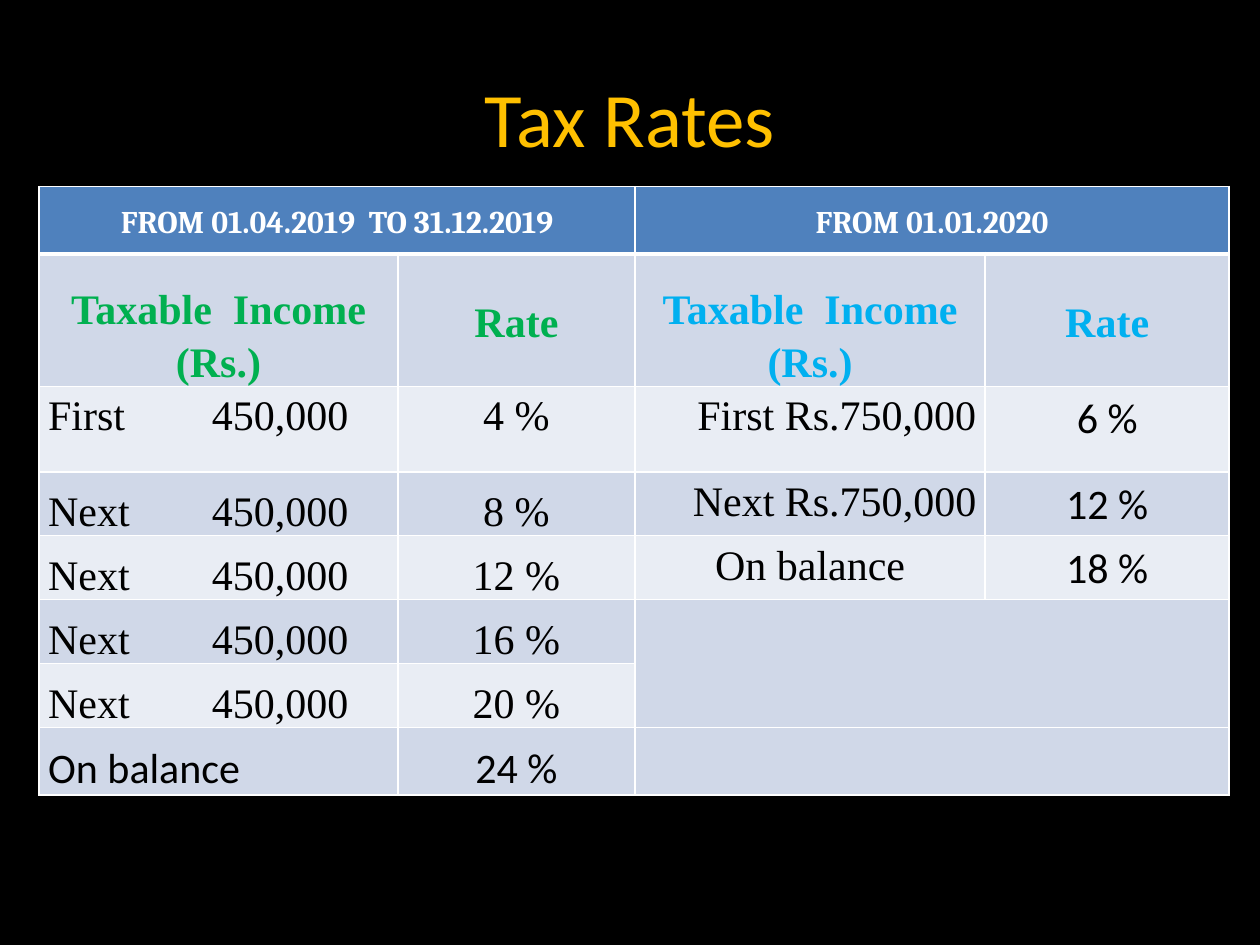
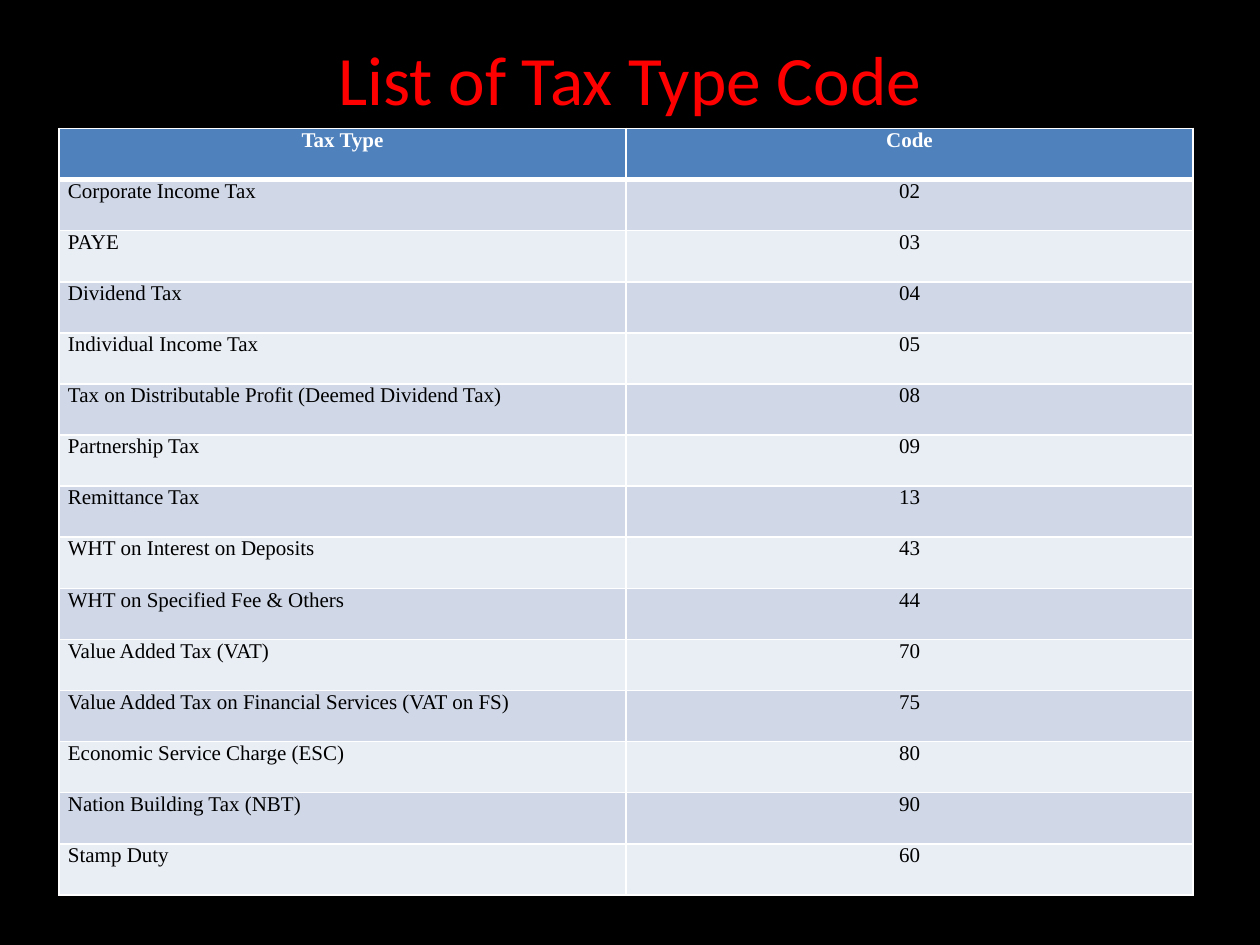
from lxml.etree import SubElement
from pptx import Presentation
from pptx.dml.color import RGBColor
from pptx.enum.text import MSO_ANCHOR as ANCHOR, MSO_AUTO_SIZE, PP_ALIGN as ALIGN
from pptx.oxml.ns import qn
from pptx.util import Cm, Pt

COLORS = {
    "black": "000000", "white": "FFFFFF", "header": "4F81BD",
    "band_dark": "D0D8E8", "band_light": "E9EDF4",
    "gold": "FFC000", "red": "FF0000", "green": "00B050", "blue": "00B0F0",
}
BODY_FONT, SANS_FONT, PERIOD_FONT = "Times New Roman", "Calibri", "Cambria"
TITLE_LEFT, TITLE_TOP, TITLE_WIDTH = 1.27, 0.76, 22.86
SIDE_MARGIN = 0.18
AMOUNT_TAB = 3.3
LINE_SPACING = 1.15

PERIODS = ["FROM 01.04.2019  TO 31.12.2019", "FROM 01.01.2020"]
RATE_HEADINGS = ["Taxable  Income (Rs.)", "Rate"]
RATES_2019 = [
    ("First\t450,000", "4 %"),
    ("Next\t450,000", "8 %"),
    ("Next\t450,000", "12 %"),
    ("Next\t450,000", "16 %"),
    ("Next\t450,000", "20 %"),
    ("On balance", "24 %"),
]
RATES_2020 = [
    ("First Rs.750,000", "6 %"),
    ("Next Rs.750,000", "12 %"),
    ("On balance", "18 %"),
]
RATE_COLUMNS = [7.23, 4.78, 7.06, 4.92]
RATE_ROWS = [1.36, 2.67, 1.72, 1.29, 1.29, 1.29, 1.29, 1.36]

TAX_CODES = [
    ("Tax Type", "Code"),
    ("Corporate Income Tax", "02"),
    ("PAYE", "03"),
    ("Dividend Tax", "04"),
    ("Individual Income Tax", "05"),
    ("Tax on Distributable Profit (Deemed Dividend Tax)", "08"),
    ("Partnership Tax", "09"),
    ("Remittance Tax", "13"),
    ("WHT on Interest on Deposits", "43"),
    ("WHT on Specified Fee & Others", "44"),
    ("Value Added Tax (VAT)", "70"),
    ("Value Added Tax on Financial Services (VAT on FS)", "75"),
    ("Economic Service Charge (ESC)", "80"),
    ("Nation Building Tax (NBT)", "90"),
    ("Stamp Duty", "60"),
]
CODE_COLUMNS = [11.43, 11.43]
CODE_ROWS = [1.03] * len(TAX_CODES)


def color(name):
    return RGBColor.from_string(COLORS[name])


def write(holder, text, size=24, font=BODY_FONT, ink="black", bold=False,
          align=ALIGN.CENTER, anchor=ANCHOR.TOP, spacing=None):
    """Write one paragraph into a table cell or a placeholder."""
    holder.vertical_anchor = anchor
    paragraph = holder.text_frame.paragraphs[0] if hasattr(holder, "text_frame") else holder.paragraphs[0]
    paragraph.alignment = align
    if spacing:
        paragraph.line_spacing = spacing
    run = paragraph.add_run()
    run.text = text
    run.font.size, run.font.name, run.font.bold = Pt(size), font, bold
    run.font.color.rgb = color(ink)
    return paragraph


def add_tab_stop(paragraph, position):
    properties = paragraph._p.get_or_add_pPr()
    tabs = SubElement(properties, qn("a:tabLst"))
    SubElement(tabs, qn("a:tab"), pos=str(Cm(position)), algn="l")


def add_border(cell, side, width):
    line = SubElement(cell._tc.get_or_add_tcPr(), qn(f"a:ln{side}"), w=str(Pt(width)))
    fill = SubElement(line, qn("a:solidFill"))
    SubElement(fill, qn("a:srgbClr"), val=COLORS["white"])


def add_titled_slide(presentation, title, height, **text_format):
    slide = presentation.slides.add_slide(presentation.slide_layouts[5])
    shape = slide.shapes.title
    shape.left, shape.top = Cm(TITLE_LEFT), Cm(TITLE_TOP)
    shape.width, shape.height = Cm(TITLE_WIDTH), Cm(height)
    shape.text_frame.auto_size = MSO_AUTO_SIZE.NONE
    write(shape.text_frame, title, font=SANS_FONT, anchor=ANCHOR.MIDDLE, **text_format)
    return slide


def add_banded_table(slide, left, top, columns, rows):
    """Add a table with a blue header, two-tone bands and white borders."""
    frame = slide.shapes.add_table(len(rows), len(columns), Cm(left), Cm(top),
                                   Cm(sum(columns)), Cm(sum(rows)))
    table = frame.table
    for column, width in zip(table.columns, columns):
        column.width = Cm(width)
    for index, (row, height) in enumerate(zip(table.rows, rows)):
        row.height = Cm(height)
        band = "header" if index == 0 else "band_dark" if index % 2 else "band_light"
        for cell in row.cells:
            cell.margin_left = cell.margin_right = Cm(SIDE_MARGIN)
            cell.margin_top = cell.margin_bottom = 0
            for side in "LRTB":
                under_header = (index, side) in [(0, "B"), (1, "T")]
                add_border(cell, side, 3 if under_header else 1)
            cell.fill.solid()
            cell.fill.fore_color.rgb = color(band)
    return table


def build_rates_slide(presentation):
    slide = add_titled_slide(presentation, "Tax Rates", 3.17, size=44, ink="gold")
    table = add_banded_table(slide, 0.79, 3.76, RATE_COLUMNS, RATE_ROWS)

    for first, period, ink in zip((0, 2), PERIODS, ("green", "blue")):
        table.cell(0, first).merge(table.cell(0, first + 1))
        write(table.cell(0, first), period, size=18, font=PERIOD_FONT, ink="white",
              bold=True, anchor=ANCHOR.MIDDLE, spacing=LINE_SPACING)
        for offset, heading in enumerate(RATE_HEADINGS):
            write(table.cell(1, first + offset), heading, ink=ink, bold=True,
                  anchor=ANCHOR.MIDDLE if offset else ANCHOR.BOTTOM, spacing=LINE_SPACING)

    for row, (income, rate) in enumerate(RATES_2019, start=2):
        style = {
            "font": SANS_FONT if income == "On balance" else BODY_FONT,
            "anchor": ANCHOR.TOP if row == 2 else ANCHOR.BOTTOM,
            "spacing": LINE_SPACING,
        }
        paragraph = write(table.cell(row, 0), income, align=ALIGN.LEFT, **style)
        if "\t" in income:
            add_tab_stop(paragraph, AMOUNT_TAB)
        write(table.cell(row, 1), rate, **style)

    for row, (income, rate) in enumerate(RATES_2020, start=2):
        align = ALIGN.CENTER if income == "On balance" else ALIGN.RIGHT
        write(table.cell(row, 2), income, align=align, spacing=LINE_SPACING)
        write(table.cell(row, 3), rate, font=SANS_FONT, spacing=LINE_SPACING)

    table.cell(5, 2).merge(table.cell(6, 3))
    table.cell(7, 2).merge(table.cell(7, 3))


def build_codes_slide(presentation):
    slide = add_titled_slide(presentation, "List of Tax Type Code", 1.63, size=39.6, ink="red")
    table = add_banded_table(slide, 1.19, 2.59, CODE_COLUMNS, CODE_ROWS)
    for row, (tax_type, code) in enumerate(TAX_CODES):
        style = {"size": 12, "bold": row == 0, "ink": "black" if row else "white"}
        write(table.cell(row, 0), tax_type, align=ALIGN.LEFT if row else ALIGN.CENTER, **style)
        write(table.cell(row, 1), code, **style)


def main():
    presentation = Presentation()
    presentation.slide_width, presentation.slide_height = Cm(25.4), Cm(19.05)
    background = presentation.slide_master.background.fill
    background.solid()
    background.fore_color.rgb = color("black")
    build_rates_slide(presentation)
    build_codes_slide(presentation)
    presentation.save("out.pptx")


if __name__ == "__main__":
    main()
